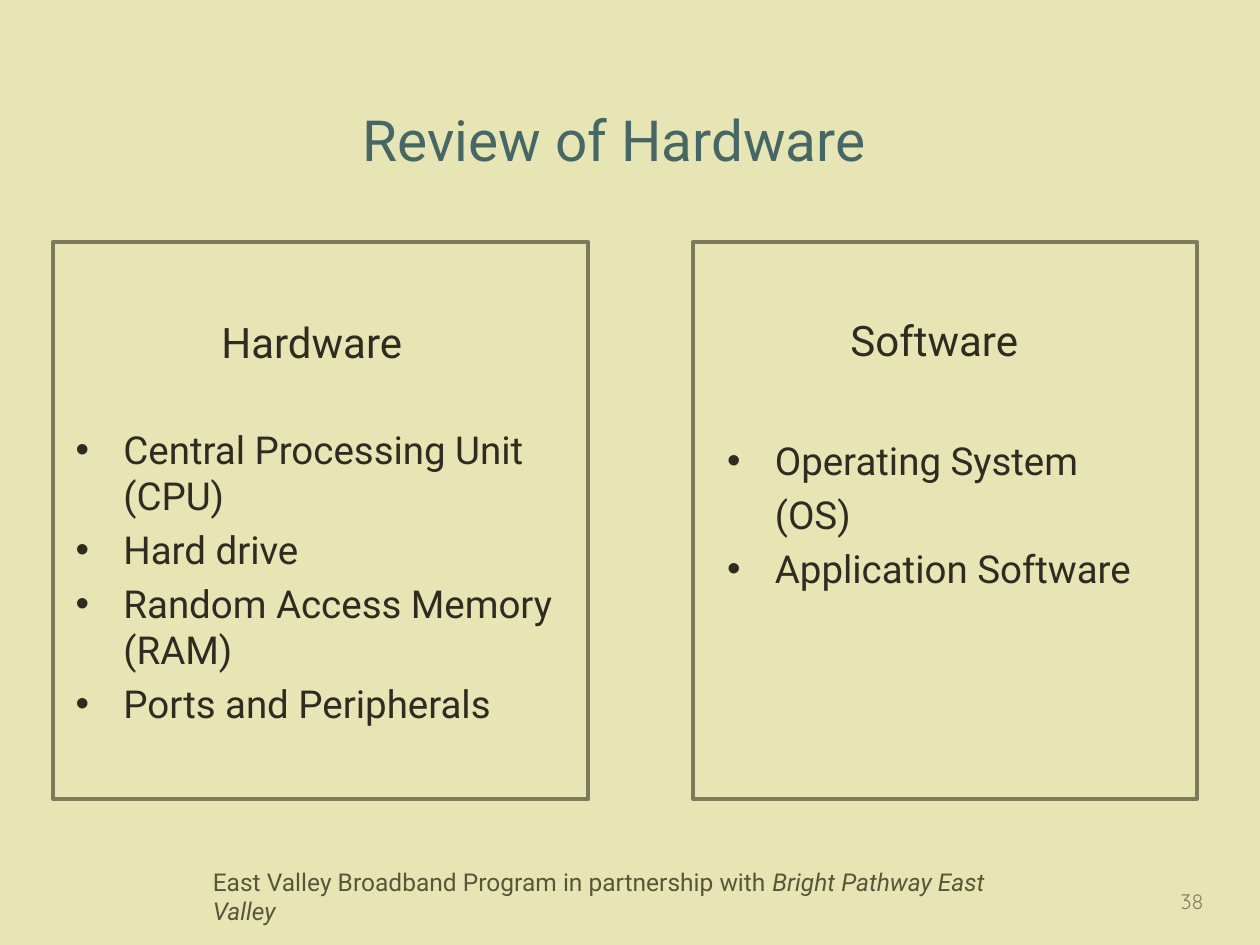
from lxml import etree
from pptx import Presentation
from pptx.dml.color import RGBColor
from pptx.enum import shapes, text
from pptx.oxml import ns
from pptx.util import Inches, Pt

CREAM = RGBColor(0xE8, 0xE5, 0xB4)
TEAL = RGBColor(0x45, 0x68, 0x67)
INK = RGBColor(0x2F, 0x2B, 0x20)
OLIVE = RGBColor(0x7D, 0x7A, 0x5C)
MOSS = RGBColor(0x58, 0x56, 0x3A)
TAN = RGBColor(0x89, 0x7D, 0x5D)


def place(part, left, top, width, height, anchor):
    part.left, part.top = Inches(left), Inches(top)
    part.width, part.height = Inches(width), Inches(height)
    frame = part.text_frame
    frame.word_wrap = True
    frame.auto_size = text.MSO_AUTO_SIZE.NONE
    frame.vertical_anchor = anchor
    return frame


def add_run(paragraph, words, size, color, font="Roboto", italic=False):
    run = paragraph.add_run()
    run.text = words
    run.font.name = font
    run.font.size = Pt(size)
    run.font.bold = False
    run.font.italic = italic
    run.font.color.rgb = color


TOP = text.MSO_ANCHOR.TOP
MIDDLE = text.MSO_ANCHOR.MIDDLE
BOTTOM = text.MSO_ANCHOR.BOTTOM

prs = Presentation()
prs.slide_width, prs.slide_height = Inches(10), Inches(7.5)
slide = prs.slides.add_slide(prs.slide_layouts.get_by_name("Comparison"))
slide.background.fill.solid()
slide.background.fill.fore_color.rgb = CREAM
title, hardware_head, hardware_list, software_head, software_list = slide.placeholders

headings = [
    (title, "Review of Hardware", 32.4, TEAL, (0.25, 0.5, 9.25, 0.92)),
    (hardware_head, "Hardware", 24, INK, (0.45, 2.25, 4.05, 0.71)),
    (software_head, "Software", 24, INK, (5.33, 2.25, 4.17, 0.7)),
]
for heading, words, size, color, box in headings:
    line = place(heading, *box, BOTTOM).paragraphs[0]
    line.alignment = text.PP_ALIGN.CENTER
    add_run(line, words, size, color)

lists = [
    (hardware_list, (0.5, 3.33, 4, 2.95),
     ["Central Processing Unit (CPU)", "Hard drive",
      "Random Access Memory (RAM)", "Ports and Peripherals"]),
    (software_list, (5.67, 3.42, 3.84, 2.25),
     ["Operating System", "(OS)", "Application Software"]),
]
for bullets, box, items in lists:
    frame = place(bullets, *box, TOP)
    for number, item in enumerate(items):
        line = frame.add_paragraph() if number else frame.paragraphs[0]
        properties = line._p.get_or_add_pPr()
        properties.set("marL", str(Inches(0.38)))
        if item == "(OS)":
            properties.set("indent", "0")
            etree.SubElement(properties, ns.qn("a:buNone"))
        else:
            properties.set("indent", str(Inches(-0.38)))
            etree.SubElement(properties, ns.qn("a:buChar")).set("char", "•")
        add_run(line, item, 22, INK)

for left, width in [(0.42, 4.25), (5.5, 4)]:
    border = slide.shapes.add_shape(
        shapes.MSO_SHAPE.RECTANGLE, Inches(left), Inches(1.92), Inches(width), Inches(4.42))
    border.shadow.inherit = False
    border.fill.background()
    border.line.color.rgb = OLIVE
    border.line.width = Pt(2.25)

credit = slide.shapes.add_textbox(0, 0, 0, 0)
credit_line = place(credit, 1.59, 6.83, 6.82, 0.56, TOP).paragraphs[0]
add_run(credit_line, "East Valley Broadband Program in partnership with ", 14, MOSS)
add_run(credit_line, "Bright Pathway East Valley", 14, MOSS, italic=True)

page_number = slide.shapes.add_textbox(0, 0, 0, 0)
page_frame = place(page_number, 9.34, 6.95, 0.61, 0.4, MIDDLE)
page_frame.margin_left = Inches(0.03)
page_frame.margin_right = Inches(0.05)
add_run(page_frame.paragraphs[0], "38", 12, TAN, font="Quicksand")

prs.save("out.pptx")
